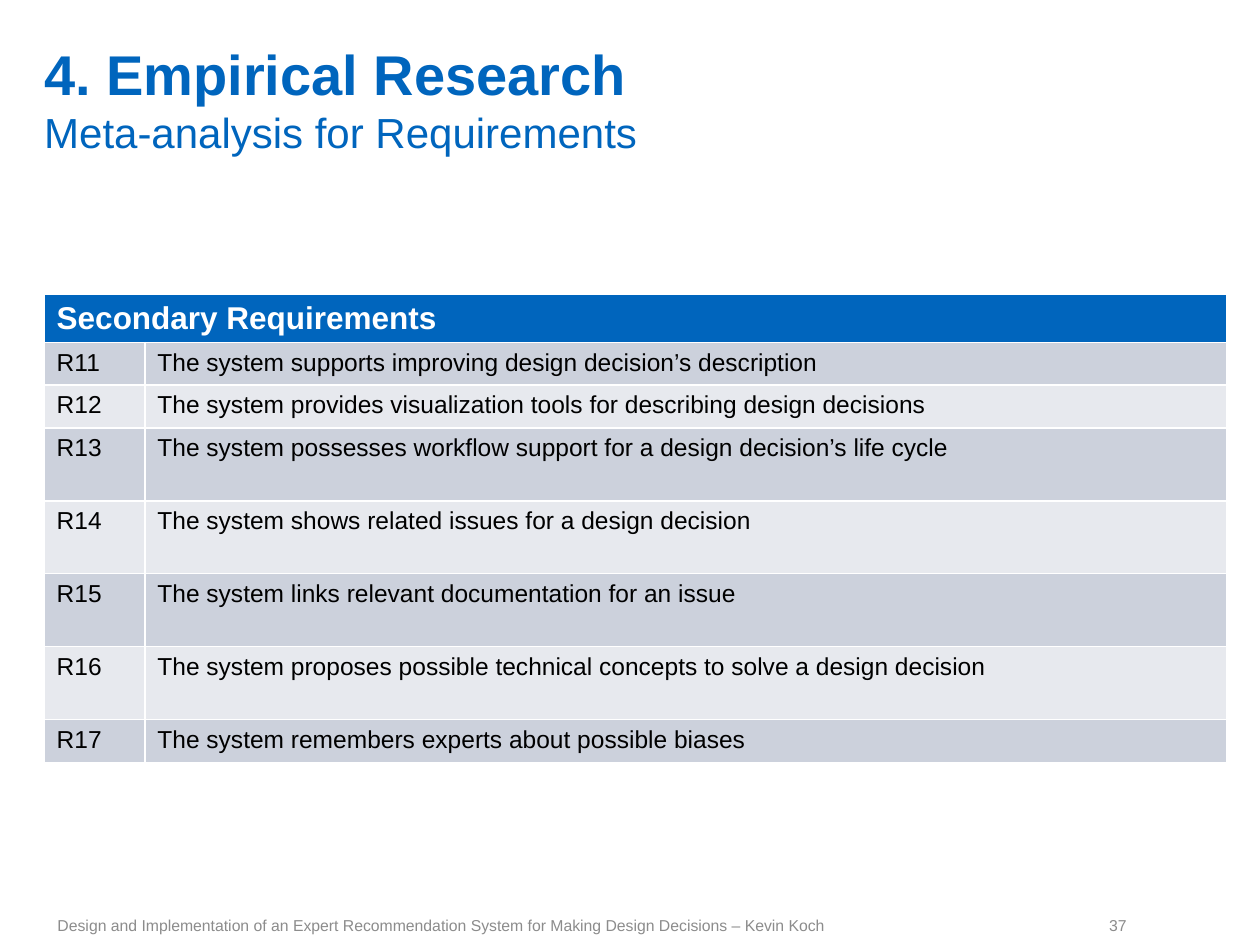
from copy import deepcopy

from pptx import Presentation
from pptx.dml.color import RGBColor
from pptx.enum.text import MSO_ANCHOR as Anchor, PP_ALIGN as Align
from pptx.util import Cm, Pt

BLUE, WHITE, BLACK, GREY = "0065BD", "FFFFFF", "000000", "8C8C8C"
BANDS = "CCD1DC", "E7E9EE"
COLUMN_WIDTHS = 2.03, 21.82
LOW_ROW, HIGH_ROW = 0.86, 1.47

REQUIREMENTS = [
    ("R11", "The system supports improving design decision’s description", LOW_ROW),
    ("R12", "The system provides visualization tools for describing design decisions", LOW_ROW),
    ("R13", "The system possesses workflow support for a design decision’s life cycle", HIGH_ROW),
    ("R14", "The system shows related issues for a design decision", HIGH_ROW),
    ("R15", "The system links relevant documentation for an issue", HIGH_ROW),
    ("R16", "The system proposes possible technical concepts to solve a design decision", HIGH_ROW),
    ("R17", "The system remembers experts about possible biases", LOW_ROW),
]


def rgb(value):
    return RGBColor.from_string(value)


def style_font(font, size, color, bold=False):
    font.name = "Arial"
    font.size = Pt(size)
    font.bold = bold
    font.color.rgb = rgb(color)


def set_title(slide, heading, subheading):
    title = slide.shapes.title
    title.left, title.top, title.width, title.height = Cm(0.89), Cm(0.79), Cm(21.77), Cm(2.39)
    frame = title.text_frame
    frame.margin_left = frame.margin_top = frame.margin_right = frame.margin_bottom = 0
    frame.vertical_anchor = Anchor.MIDDLE
    frame.word_wrap = True
    para = frame.paragraphs[0]
    para.alignment = Align.LEFT
    first = para.add_run()
    first.text = heading
    style_font(first.font, 32, BLUE, bold=True)
    para.add_line_break()
    # The break takes the heading's format, so that it does not stretch the line
    first._r.getnext().append(deepcopy(first._r.rPr))
    second = para.add_run()
    second.text = subheading
    style_font(second.font, 24, BLUE)


def fill_cell(cell, text, fill, size, color, bold=False):
    cell.fill.solid()
    cell.fill.fore_color.rgb = rgb(fill)
    cell.text = text
    style_font(cell.text_frame.paragraphs[0].font, size, color, bold)


def add_requirements_table(slide, heading, requirements):
    heights = [LOW_ROW] + [height for _, _, height in requirements]
    table = slide.shapes.add_table(
        len(heights), len(COLUMN_WIDTHS), Cm(0.89), Cm(5.94),
        Cm(sum(COLUMN_WIDTHS)), Cm(sum(heights))).table
    for column, width in zip(table.columns, COLUMN_WIDTHS):
        column.width = Cm(width)
    for row, height in zip(table.rows, heights):
        row.height = Cm(height)
    table.cell(0, 0).merge(table.cell(0, 1))
    fill_cell(table.cell(0, 0), heading, BLUE, 18, WHITE, bold=True)
    for index, (number, text, _) in enumerate(requirements):
        for column, content in enumerate((number, text)):
            fill_cell(table.cell(index + 1, column), content, BANDS[index % 2], 14, BLACK)


def add_footer_text(slide, text, left, width, alignment=Align.LEFT):
    box = slide.shapes.add_textbox(Cm(left), Cm(18.24), Cm(width), Cm(0.81))
    frame = box.text_frame
    frame.word_wrap = True
    frame.vertical_anchor = Anchor.MIDDLE
    para = frame.paragraphs[0]
    para.text = text
    para.alignment = alignment
    style_font(para.font, 9, GREY)


def main():
    deck = Presentation()
    deck.slide_width, deck.slide_height = Cm(25.4), Cm(19.05)
    slide = deck.slides.add_slide(deck.slide_layouts[5])
    set_title(slide, "4. Empirical Research", "Meta-analysis for Requirements")
    add_requirements_table(slide, "Secondary Requirements", REQUIREMENTS)
    add_footer_text(
        slide, "Design and Implementation of an Expert Recommendation System "
        "for Making Design Decisions – Kevin Koch", 0.91, 20.35)
    add_footer_text(slide, "37", 21.26, 1.7, Align.RIGHT)
    deck.save("out.pptx")


if __name__ == "__main__":
    main()
